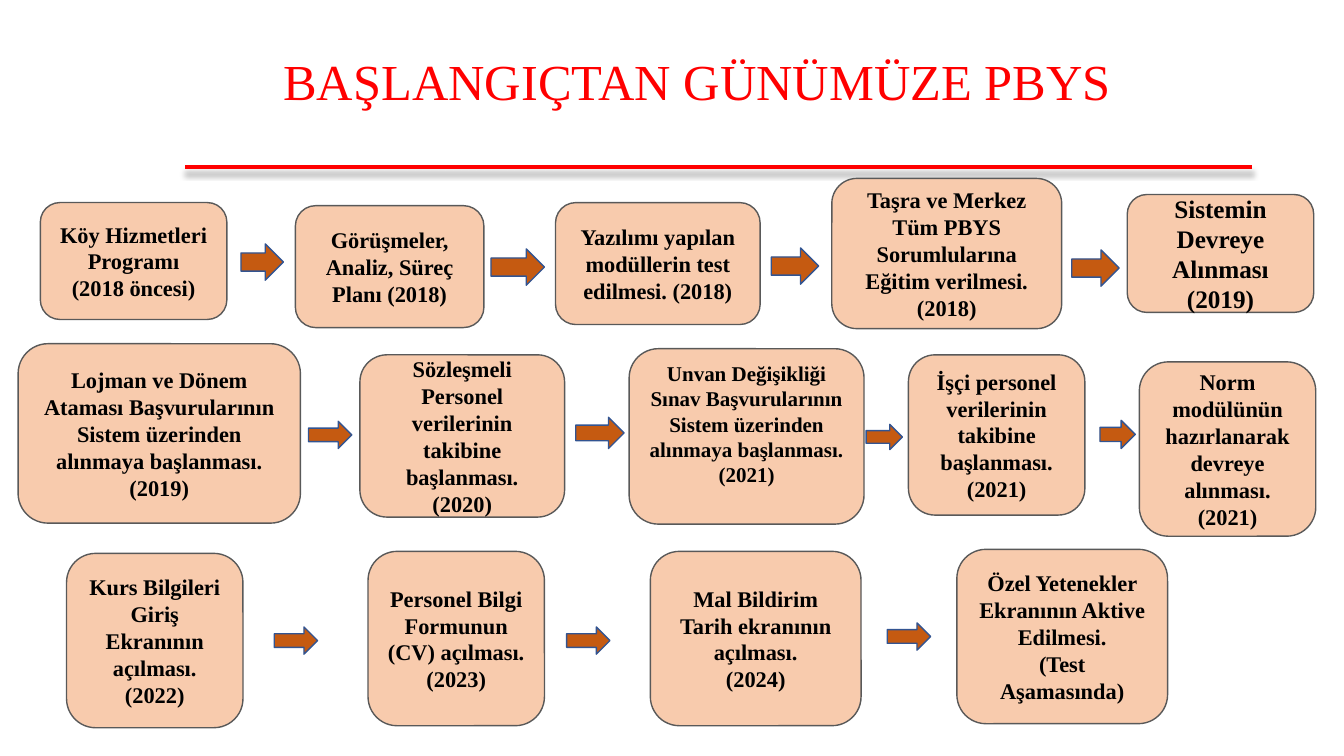
import pptx
import pptx.dml.color
import pptx.enum.shapes
import pptx.enum.text
import pptx.oxml
import pptx.util
from pptx.util import Inches

FONT = "Times New Roman"
SHAPES = pptx.enum.shapes.MSO_SHAPE
ROUND, ALTERNATE = SHAPES.ROUNDED_RECTANGLE, SHAPES.FLOWCHART_ALTERNATE_PROCESS
MIDDLE = pptx.enum.text.MSO_ANCHOR.MIDDLE
CENTER = pptx.enum.text.PP_ALIGN.CENTER


def color(value):
    return pptx.dml.color.RGBColor.from_string(value)


def add_filled(kind, place, fill, line):
    shape = slide.shapes.add_shape(kind, *[Inches(value) for value in place])
    shape.shadow.inherit = False
    shape.fill.solid()
    shape.fill.fore_color.rgb = color(fill)
    shape.line.color.rgb = color(line)
    shape.line.width = pptx.util.Pt(1)
    return shape


deck = pptx.Presentation()
deck.slide_width = Inches(13.33)
deck.slide_height = Inches(7.5)
slide = deck.slides.add_slide(deck.slide_layouts[5])

# Title
title = slide.shapes.title
title.left, title.top = Inches(2.25), Inches(0.22)
title.width, title.height = Inches(9.33), Inches(1.23)
title.text_frame.text = "BAŞLANGIÇTAN GÜNÜMÜZE PBYS"
title.text_frame.vertical_anchor = MIDDLE
heading = title.text_frame.paragraphs[0]
heading.alignment = CENTER
heading.line_spacing = 0.9
heading.font.name = FONT
heading.font.size = pptx.util.Pt(36)
heading.font.color.rgb = color("FF0000")

# Red rule with a soft shadow below it
rule = slide.shapes.add_connector(
    pptx.enum.shapes.MSO_CONNECTOR.STRAIGHT,
    Inches(12.42), Inches(1.66), Inches(1.84), Inches(1.66))
rule.line.color.rgb = color("FF0000")
rule.line.width = pptx.util.Pt(3)
rule._element.spPr.append(pptx.oxml.parse_xml(
    '<a:effectLst xmlns:a="http://schemas.openxmlformats.org/drawingml/2006/main">'
    '<a:outerShdw blurRad="50800" dist="50800" dir="5400000" rotWithShape="0">'
    '<a:srgbClr val="000000"><a:alpha val="25000"/></a:srgbClr>'
    '</a:outerShdw></a:effectLst>'))

# Steps: shape, place (left, top, width, height), text size, paragraphs
steps = [
    (ALTERNATE, (0.4, 2.01, 1.85, 1.16), 16,
     ["Köy Hizmetleri Programı", "(2018 öncesi)"]),
    (ROUND, (2.93, 2.04, 1.87, 1.21), 16,
     ["Görüşmeler, Analiz, Süreç Planı (2018)"]),
    (ROUND, (5.51, 2.01, 2.03, 1.21), 16,
     ["Yazılımı yapılan modüllerin test edilmesi. (2018)"]),
    (ROUND, (8.25, 1.77, 2.28, 1.49), 16,
     ["Taşra ve Merkez Tüm PBYS Sorumlularına Eğitim verilmesi. (2018)"]),
    (ROUND, (11.18, 1.93, 1.85, 1.17), 18,
     ["Sistemin Devreye Alınması (2019)"]),
    (ROUND, (0.18, 3.41, 2.8, 1.78), 16,
     ["Lojman ve Dönem Ataması Başvurularının Sistem üzerinden alınmaya başlanması.",
      "(2019)"]),
    (ROUND, (3.57, 3.52, 2.03, 1.61), 16,
     ["Sözleşmeli Personel verilerinin takibine başlanması.", "(2020)"]),
    (ALTERNATE, (6.24, 3.46, 2.33, 1.74), 15,
     ["Unvan Değişikliği Sınav Başvurularının Sistem üzerinden alınmaya başlanması.",
      "(2021)"]),
    (ALTERNATE, (9.01, 3.52, 1.75, 1.59), 16,
     ["İşçi personel verilerinin takibine başlanması. (2021)"]),
    (ALTERNATE, (11.3, 3.59, 1.75, 1.73), 16,
     ["Norm modülünün hazırlanarak devreye alınması.", "(2021)"]),
    (ALTERNATE, (0.66, 5.49, 1.75, 1.73), 16,
     ["Kurs Bilgileri Giriş Ekranının açılması.", "(2022)"]),
    (ALTERNATE, (3.65, 5.47, 1.75, 1.73), 16,
     ["Personel Bilgi Formunun (CV) açılması.", "(2023)"]),
    (ALTERNATE, (6.45, 5.47, 2.09, 1.73), 16,
     ["Mal Bildirim Tarih ekranının açılması.", "(2024)"]),
    (ALTERNATE, (9.49, 5.45, 2.09, 1.73), 16,
     ["Özel Yetenekler Ekranının Aktive Edilmesi.", "(Test Aşamasında)"]),
]
for kind, place, size, lines in steps:
    box = add_filled(kind, place, "F8CBAD", "595959")
    frame = box.text_frame
    frame.word_wrap = True
    frame.vertical_anchor = MIDDLE
    if size == 15:  # the smaller text sits higher in its box
        frame.margin_bottom = Inches(0.3)
    frame.text = "\n".join(lines)
    for para in frame.paragraphs:
        para.alignment = CENTER
        para.font.name = FONT
        para.font.size = pptx.util.Pt(size)
        para.font.bold = True
        para.font.color.rgb = color("000000")

# Arrows between the steps, row by row
arrows = [
    (2.39, 2.42, 0.42, 0.36), (4.87, 2.47, 0.53, 0.36),
    (7.65, 2.46, 0.47, 0.36), (10.63, 2.48, 0.47, 0.36),
    (3.06, 4.18, 0.43, 0.27), (5.71, 4.14, 0.48, 0.31),
    (8.59, 4.21, 0.36, 0.25), (10.91, 4.17, 0.35, 0.28),
    (2.72, 6.22, 0.43, 0.27), (5.62, 6.22, 0.43, 0.27),
    (8.8, 6.18, 0.43, 0.27),
]
for place in arrows:
    add_filled(SHAPES.RIGHT_ARROW, place, "C55A11", "325491")

deck.save("out.pptx")
